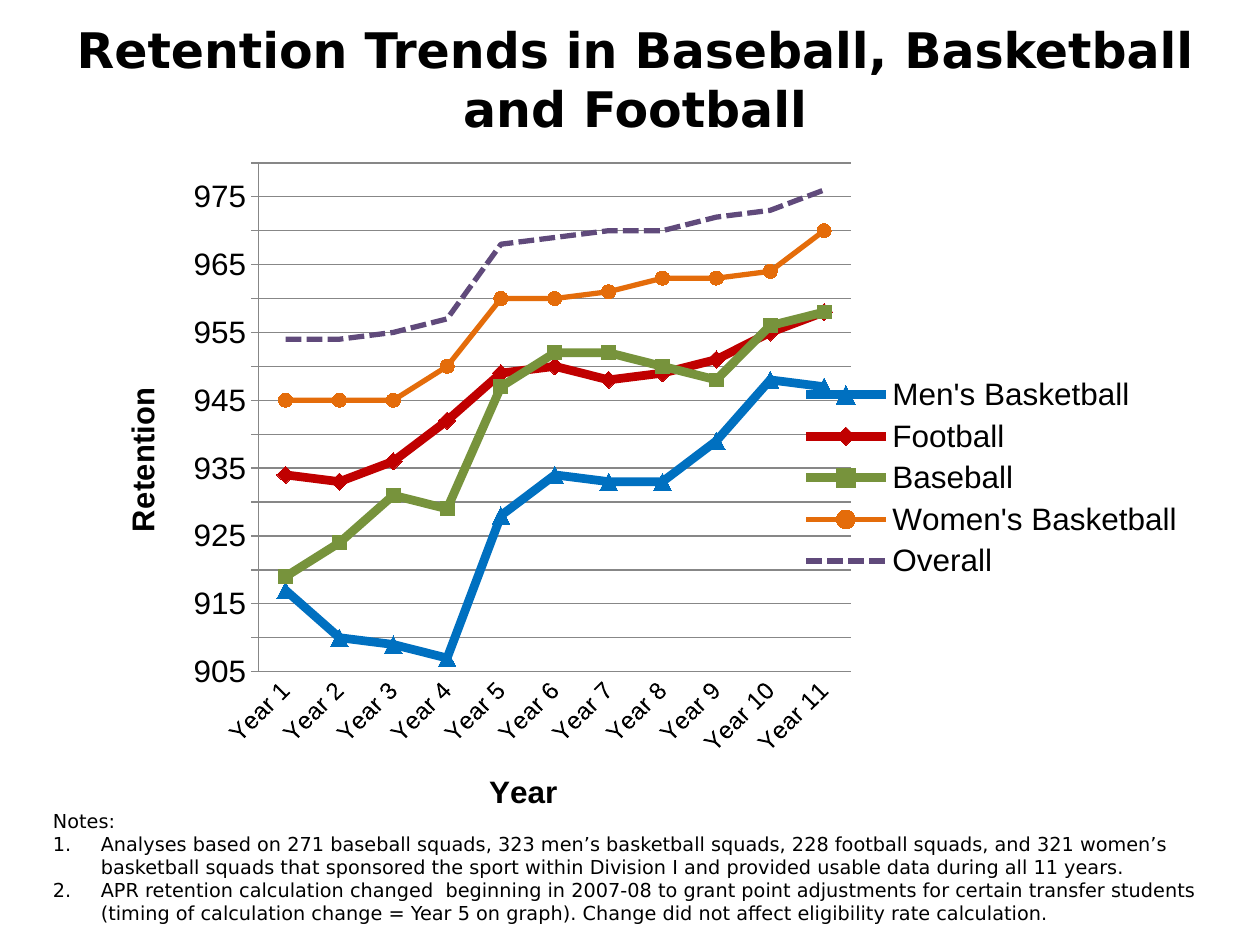
import pptx
import pptx.chart.data
import pptx.dml.color
import pptx.enum.chart
import pptx.enum.dml
import pptx.enum.text
import pptx.oxml
import pptx.oxml.ns
import pptx.util
from dataclasses import dataclass

Inches = pptx.util.Inches
Pt = pptx.util.Pt
MARKER = pptx.enum.chart.XL_MARKER_STYLE


@dataclass(frozen=True)
class Theme:
    """Colours, fonts and type sizes of the slide."""
    ink: str = "000000"
    grid: str = "878787"
    mens: str = "0070C0"
    football: str = "C00000"
    baseball: str = "77933C"
    womens: str = "E46C0A"
    overall: str = "604A7B"
    text_font: str = "DejaVu Sans"
    chart_font: str = "Arial"
    title_size: int = 28
    chart_size: int = 18
    category_size: int = 14
    note_size: int = 11


THEME = Theme()
YEARS = [f"Year {number}" for number in range(1, 12)]
TRENDS = [
    ("Men's Basketball", [917, 910, 909, 907, 928, 934, 933, 933, 939, 948, 947],
     THEME.mens, 5, MARKER.TRIANGLE, 10),
    ("Football", [934, 933, 936, 942, 949, 950, 948, 949, 951, 955, 958],
     THEME.football, 5, MARKER.DIAMOND, 10),
    ("Baseball", [919, 924, 931, 929, 947, 952, 952, 950, 948, 956, 958],
     THEME.baseball, 5, MARKER.SQUARE, 8),
    ("Women's Basketball", [945, 945, 945, 950, 960, 960, 961, 963, 963, 964, 970],
     THEME.womens, 3, MARKER.CIRCLE, 8),
    ("Overall", [954, 954, 955, 957, 968, 969, 970, 970, 972, 973, 976],
     THEME.overall, 3, MARKER.NONE, None),
]
NOTES = [
    "Analyses based on 271 baseball squads, 323 men’s basketball squads, 228 football squads, "
    "and 321 women’s basketball squads that sponsored the sport within Division I and provided "
    "usable data during all 11 years.",
    "APR retention calculation changed  beginning in 2007-08 to grant point adjustments for "
    "certain transfer students (timing of calculation change = Year 5 on graph). Change did not "
    "affect eligibility rate calculation.",
]


def rgb(color):
    """Turn a hex string into a colour."""
    return pptx.dml.color.RGBColor.from_string(color)


def write(paragraph, text, *, size, font=THEME.text_font, bold=False, align=None):
    """Add formatted text to a paragraph."""
    run = paragraph.add_run()
    run.text = text
    run.font.size = Pt(size)
    run.font.name = font
    run.font.bold = bold
    run.font.color.rgb = rgb(THEME.ink)
    if align is not None:
        paragraph.alignment = align


def layout(x, y, width=None, height=None, inner=False):
    """Build a manual chart layout from fractions of the chart."""
    parts = [("layoutTarget", "inner")] if inner else []
    parts += [("xMode", "edge"), ("yMode", "edge"), ("x", x), ("y", y)]
    if width is not None:
        parts += [("w", width), ("h", height)]
    body = "".join(f'<c:{tag} val="{value}"/>' for tag, value in parts)
    return pptx.oxml.parse_xml(
        f'<c:layout {pptx.oxml.ns.nsdecls("c")}><c:manualLayout>{body}</c:manualLayout></c:layout>')


def place(element, new_layout, before):
    """Give a chart part its layout, after the named preceding child or first."""
    for old in element.findall(pptx.oxml.ns.qn("c:layout")):
        element.remove(old)
    previous = element.find(pptx.oxml.ns.qn(before)) if before else None
    if previous is None:
        element.insert(0, new_layout)
    else:
        previous.addnext(new_layout)


class SlideBuilder:
    """Holds the theme and the current slide."""

    def __init__(self, theme, slide):
        """Keep the theme and slide."""
        self.theme = theme
        self.slide = slide

    def title(self, text, left, top, width, height):
        """Fill and place the title placeholder."""
        heading = self.slide.shapes.title
        heading.left, heading.top, heading.width, heading.height = left, top, width, height
        frame = heading.text_frame
        frame.auto_size = pptx.enum.text.MSO_AUTO_SIZE.NONE
        frame.vertical_anchor = pptx.enum.text.MSO_ANCHOR.MIDDLE
        write(frame.paragraphs[0], text, size=self.theme.title_size, bold=True,
              align=pptx.enum.text.PP_ALIGN.CENTER)

    def axis(self, axis, caption, x, y, tick):
        """Format an axis and its title."""
        write(axis.axis_title.text_frame.paragraphs[0], caption, size=self.theme.chart_size,
              font=self.theme.chart_font, bold=True)
        place(axis.axis_title._element, layout(x, y), "c:tx")
        axis.major_tick_mark = tick
        axis.minor_tick_mark = pptx.enum.chart.XL_TICK_MARK.NONE
        axis.format.line.color.rgb = rgb(self.theme.grid)
        axis.format.line.width = Pt(0.75)

    def line_chart(self, years, trends, left, top, width, height):
        """Add the line chart with its axes, legend and series."""
        data = pptx.chart.data.CategoryChartData(number_format="0")
        data.categories = years
        for name, values, *_ in trends:
            data.add_series(name, values)
        chart = self.slide.shapes.add_chart(
            pptx.enum.chart.XL_CHART_TYPE.LINE_MARKERS, left, top, width, height, data).chart
        chart.has_title = False
        chart.font.size = Pt(self.theme.chart_size)
        chart.font.name = self.theme.chart_font
        chart.font.color.rgb = rgb(self.theme.ink)
        chart.plots[0].vary_by_categories = False
        place(chart._chartSpace.chart.plotArea, layout(0.132, 0.04, 0.548, 0.759, True), None)

        ticks = pptx.enum.chart.XL_TICK_MARK
        year_axis, retention_axis = chart.category_axis, chart.value_axis
        self.axis(year_axis, "Year", 0.34, 0.939, ticks.NONE)
        year_axis.tick_labels.font.size = Pt(self.theme.category_size)
        year_axis._element.txPr.bodyPr.set("rot", "-2700000")
        self.axis(retention_axis, "Retention", 0, 0.37, ticks.OUTSIDE)
        retention_axis.minimum_scale = 905
        retention_axis.maximum_scale = 980
        retention_axis.major_unit = 5
        retention_axis.major_gridlines.format.line.color.rgb = rgb(self.theme.grid)
        retention_axis.major_gridlines.format.line.width = Pt(0.75)

        chart.has_legend = True
        chart.legend.position = pptx.enum.chart.XL_LEGEND_POSITION.RIGHT
        chart.legend.include_in_layout = False
        place(chart.legend._element, layout(0.63, 0.35, 0.36, 0.32), "c:legendPos")

        for series, (_, _, color, weight, marker, size) in zip(chart.plots[0].series, trends):
            series.smooth = False
            series.format.line.color.rgb = rgb(color)
            series.format.line.width = Pt(weight)
            series.marker.style = marker
            if size is None:
                series.format.line.dash_style = pptx.enum.dml.MSO_LINE.SQUARE_DOT
            else:
                series.marker.size = size
                series.marker.format.fill.solid()
                series.marker.format.fill.fore_color.rgb = rgb(color)
                series.marker.format.line.color.rgb = rgb(color)

    def notes(self, heading, items, left, top, width, height):
        """Add a heading followed by a numbered list."""
        frame = self.slide.shapes.add_textbox(left, top, width, height).text_frame
        frame.word_wrap = True
        frame.auto_size = pptx.enum.text.MSO_AUTO_SIZE.SHAPE_TO_FIT_TEXT
        frame.margin_left = frame.margin_top = frame.margin_bottom = 0
        frame.margin_right = Inches(0.02)
        for index, text in enumerate([heading, *items]):
            paragraph = frame.add_paragraph() if index else frame.paragraphs[0]
            properties = paragraph._p.get_or_add_pPr()
            properties.set("marL", str(Inches(0.38)))
            properties.set("indent", str(-Inches(0.38)))
            if index:
                properties.append(pptx.oxml.parse_xml(
                    f'<a:buAutoNum {pptx.oxml.ns.nsdecls("a")} type="arabicPeriod"/>'))
            write(paragraph, text, size=self.theme.note_size)


def main():
    """Build and save the slide."""
    deck = pptx.Presentation()
    deck.slide_width, deck.slide_height = Inches(10), Inches(7.5)
    builder = SlideBuilder(THEME, deck.slides.add_slide(deck.slide_layouts[5]))
    builder.title("Retention Trends in Baseball, Basketball and Football",
                  Inches(0.5), Inches(0.16), Inches(9.08), Inches(0.92))
    builder.line_chart(YEARS, TRENDS, Inches(0.92), Inches(1.08), Inches(8.58), Inches(5.42))
    builder.notes("Notes:", NOTES, Inches(0.42), Inches(6.42), Inches(9.25), Inches(1.16))
    deck.save("out.pptx")


if __name__ == "__main__":
    main()
